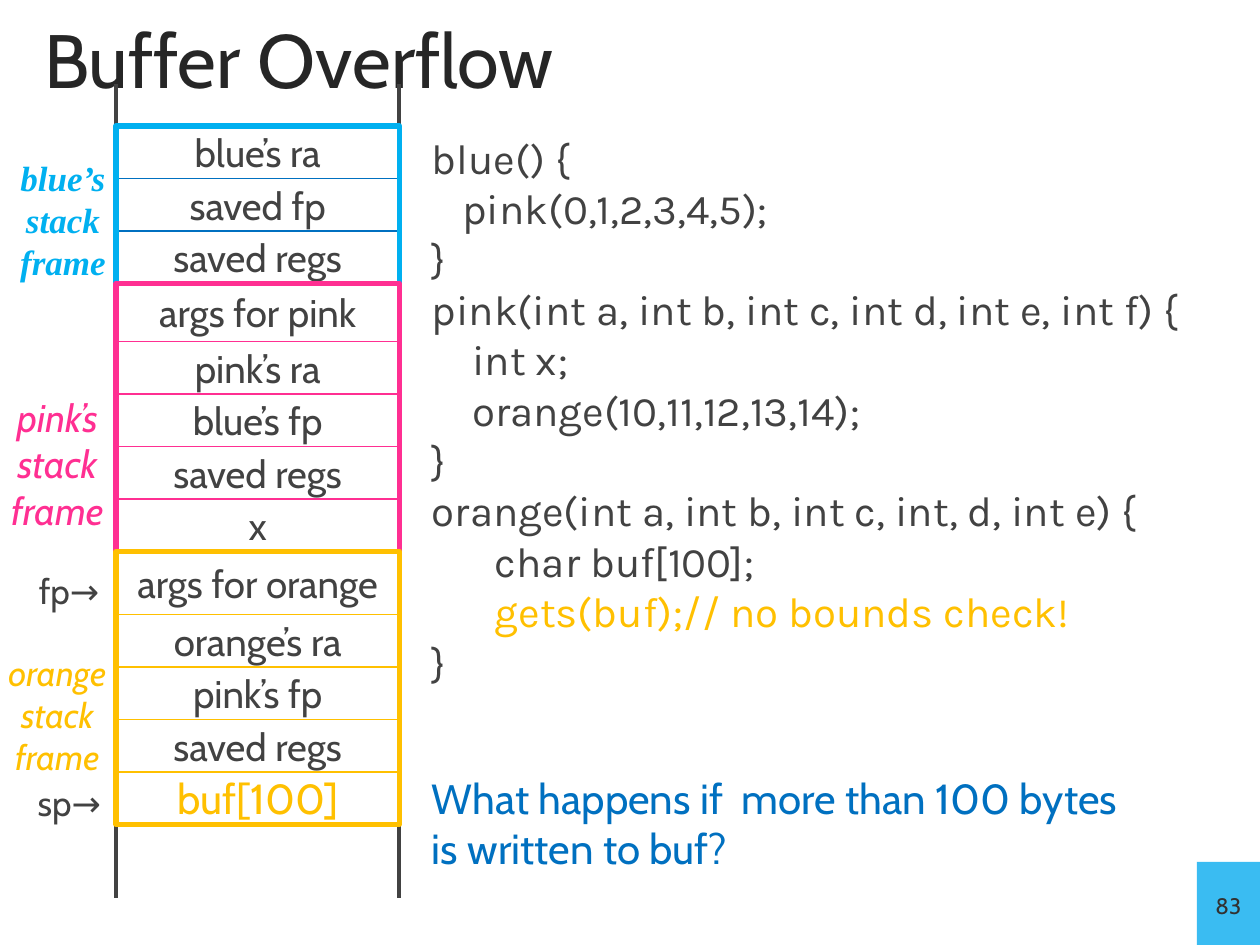
from lxml.etree import SubElement
from pptx import Presentation
from pptx.dml.color import RGBColor
from pptx.enum.shapes import MSO_CONNECTOR, MSO_SHAPE
from pptx.enum.text import MSO_ANCHOR as ANCHOR, MSO_AUTO_SIZE, PP_ALIGN as ALIGN
from pptx.oxml.ns import qn
from pptx.util import Inches, Pt

COLORS = {"text": "424242", "title": "262626", "number": "323232", "tile": "3ABCF2",
          "blue": "00B0F0", "rule": "0070C0", "pink": "FF2F92", "orange": "FFC000"}
ROW = 5 / 12                      # height of a normal stack row
LEFT, WIDTH, TOP = 0.92, 2.25, 1  # the stack column


def rgb(name):
    return RGBColor.from_string(COLORS[name])


def write(sp, text, size=22, color="text", font="Cabin", align=ALIGN.CENTER,
          anchor=ANCHOR.TOP, wrap=True, bold=False, italic=False, indents=()):
    """Fill a shape, one paragraph a line; indents are left margins in inches."""
    tf = sp.text_frame
    tf.word_wrap, tf.vertical_anchor, tf.auto_size = wrap, anchor, MSO_AUTO_SIZE.NONE
    for i, line in enumerate(text.split("\n")):
        p = tf.paragraphs[0] if i == 0 else tf.add_paragraph()
        p.alignment = align
        if indents:
            pPr = p._p.get_or_add_pPr()
            pPr.set("marL", str(Inches(indents[i])))
            pPr.set("indent", "0")
        r = p.add_run()
        r.text = line
        r.font.name, r.font.size = font, Pt(size)
        r.font.bold, r.font.italic = bold, italic
        r.font.color.rgb = rgb(color)
    return tf


prs = Presentation()
prs.slide_width, prs.slide_height = Inches(10), Inches(7.5)
s = prs.slides.add_slide(prs.slide_layouts[5])

# Title
title = s.shapes.title
title.left, title.top, title.width, title.height = map(Inches, (0.25, 0.17, 9.5, 0.58))
write(title, "Buffer Overflow", size=43.2, color="title", align=ALIGN.LEFT,
      anchor=ANCHOR.MIDDLE)

# Slide number tile
tile = s.shapes.add_shape(MSO_SHAPE.RECTANGLE, *map(Inches, (9.5, 6.84, 0.5, 0.66)))
tile.shadow.inherit = False
tile.fill.solid()
tile.fill.fore_color.rgb = rgb("tile")
tile.line.fill.background()
tf = write(tile, "83", size=16, color="number", anchor=ANCHOR.MIDDLE, wrap=False)
tf.paragraphs[0].runs[0].font._element.set("cap", "small")

# Side rails of the stack
for x in (LEFT, LEFT + WIDTH):
    rail = s.shapes.add_connector(MSO_CONNECTOR.STRAIGHT, Inches(x), Inches(0.67),
                                  Inches(x), Inches(7.13))
    rail.line.color.rgb = rgb("text")
    rail.line.width = Pt(2.25)
    SubElement(rail._element.spPr, qn("a:effectLst"))

# Stack frames: frame colour, row line colour, first row height, rows
frames = [
    ("blue", "rule", ROW, ["blue’s ra", "saved fp", "saved regs"]),
    ("pink", "pink", 0.46,
     ["args for pink", "pink’s ra", "blue’s fp", "saved regs", "x"]),
    ("orange", "orange", 0.5,
     ["args for orange", "orange’s ra", "pink’s fp", "saved regs", "buf[100]"]),
]
y = TOP
for color, row_color, first, rows in frames:
    top = y
    boxes = []
    for i, text in enumerate(rows):
        height = ROW if i else first
        boxes.append((text, y, height, row_color, 0.75))
        y += height
    boxes.append(("", top, y - top, color, 3))
    for text, box_top, height, line, weight in boxes:
        sp = s.shapes.add_shape(MSO_SHAPE.RECTANGLE, Inches(LEFT), Inches(box_top),
                                Inches(WIDTH), Inches(height))
        sp.shadow.inherit = False
        sp.fill.background()
        sp.line.color.rgb = rgb(line)
        sp.line.width = Pt(weight)
        if text:
            is_buf = text.startswith("buf")
            write(sp, text, size=24 if is_buf else 22,
                  color="orange" if is_buf else "text",
                  anchor=ANCHOR.MIDDLE, wrap=False)

# Frame names, pointers and the question
left = {"align": ALIGN.LEFT}
labels = [
    ((0, 1.19, 1, 1.11), "blue’s stack frame",
     dict(size=20, color="blue", font="Times New Roman", bold=True, italic=True)),
    ((-0.09, 3.08, 1.09, 1.21), "pink’s stack frame", dict(color="pink", italic=True)),
    ((-0.09, 5.12, 1.09, 1.11), "orange\nstack frame",
     dict(size=20, color="orange", italic=True)),
    ((0.21, 4.47, 0.92, 0.44), "fp→", dict(size=20, **left)),
    ((0.2, 6.15, 0.92, 0.44), "sp→", dict(size=20, **left)),
    ((3.33, 6.08, 5.98, 0.91), "What happens if  more than 100 bytes\nis written to buf?",
     dict(size=24, color="rule", wrap=False, **left)),
]
for box, text, style in labels:
    write(s.shapes.add_textbox(*map(Inches, box)), text, **style)

# Code listing
code = [
    (0, "blue() {"),
    (0.24, "pink(0,1,2,3,4,5);"),
    (0, "}"),
    (0, "pink(int a, int b, int c, int d, int e, int f) {"),
    (0.32, "int x;"),
    (0.32, "orange(10,11,12,13,14);"),
    (0, "}"),
    (0, "orange(int a, int b, int c, int, d, int e) {"),
    (0.5, "char buf[100];"),
    (0.5, "gets(buf);\t// no bounds check!"),
    (0, "}"),
]
indents, lines = zip(*code)
listing = s.shapes.add_textbox(*map(Inches, (3.33, 1, 6.5, 4.54)))
tf = write(listing, "\n".join(lines), size=24, font="Karla", indents=indents, **left)
unsafe = tf.paragraphs[9]
unsafe.runs[0].font.color.rgb = rgb("orange")
tabs = SubElement(unsafe._p.get_or_add_pPr(), qn("a:tabLst"))
SubElement(tabs, qn("a:tab"), pos=str(Inches(2.48)), algn="l")

prs.save("out.pptx")
